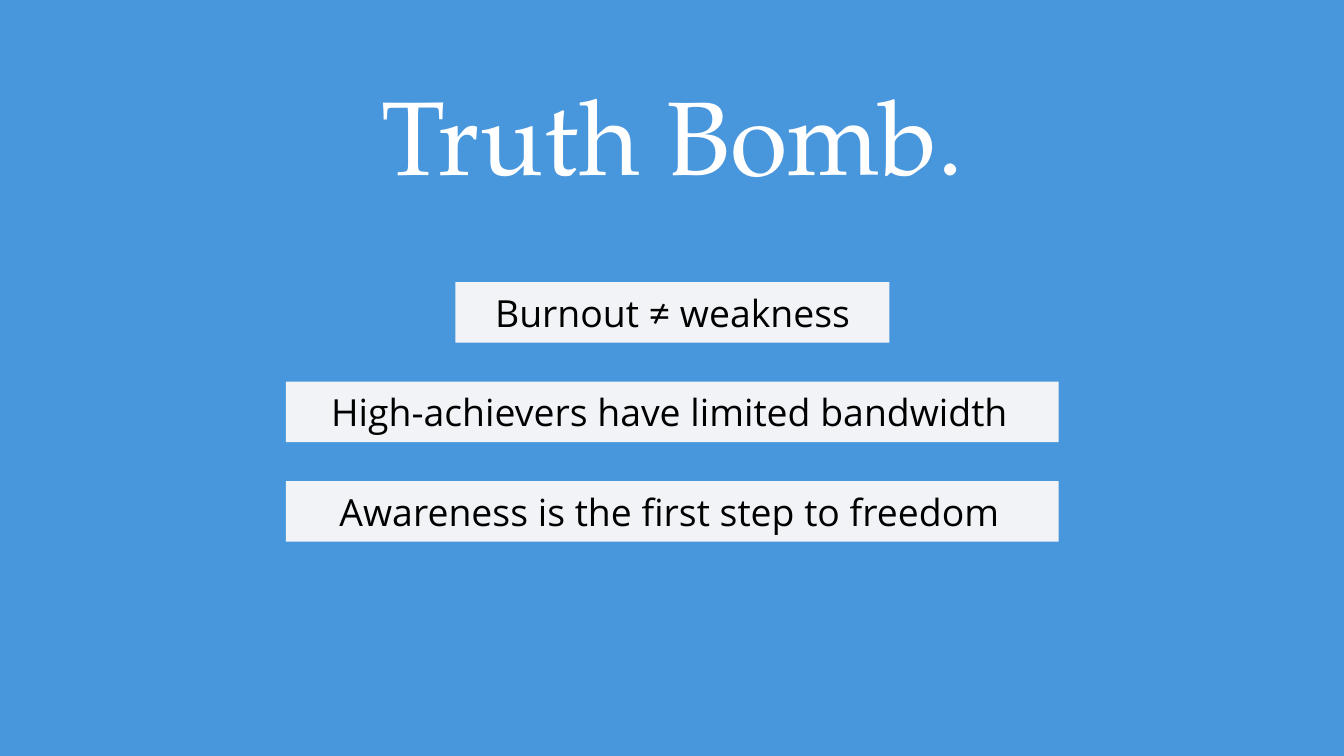
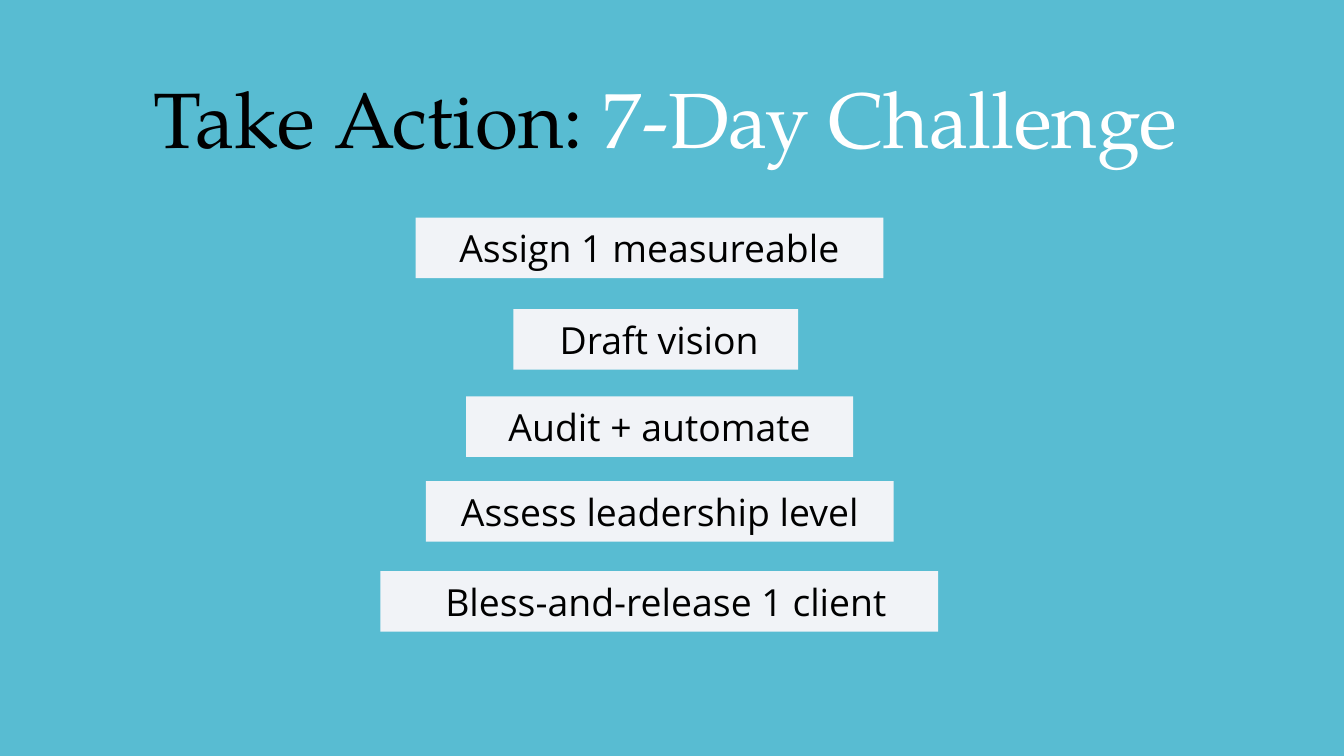
import pptx
import pptx.util
import pptx.dml.color
import pptx.enum.shapes
import pptx.enum.text

Pt = pptx.util.Pt
RGBColor = pptx.dml.color.RGBColor
ANCHOR = pptx.enum.text.MSO_ANCHOR

BLUE = RGBColor(0x48, 0x97, 0xDD)
TEAL = RGBColor(0x58, 0xBC, 0xD2)
PALE = RGBColor(0xF1, 0xF3, 0xF7)
BLACK = RGBColor(0, 0, 0)
WHITE = RGBColor(0xFF, 0xFF, 0xFF)


class Deck:
    """Hold the presentation style and the current slide."""

    title_font = "TeX Gyre Pagella"
    body_font = "Open Sans"
    body_size = 20
    inset = 7.2
    band_height = 32.4
    label_height = 22.4

    def __init__(self):
        self.prs = pptx.Presentation()
        self.prs.slide_width = Pt(720)
        self.prs.slide_height = Pt(405)
        self.s = None

    def slide(self, color):
        self.s = self.prs.slides.add_slide(self.prs.slide_layouts[6])
        self.rect(-2.9, 0, 725, 405, color)

    def rect(self, x, y, w, h, color):
        sp = self.s.shapes.add_shape(
            pptx.enum.shapes.MSO_SHAPE.RECTANGLE, Pt(x), Pt(y), Pt(w), Pt(h))
        sp.shadow.inherit = False
        sp.fill.solid()
        sp.fill.fore_color.rgb = color
        sp.line.fill.background()

    def text(self, x, y, w, h, runs, font, size, anchor):
        tf = self.s.shapes.add_textbox(Pt(x), Pt(y), Pt(w), Pt(h)).text_frame
        tf.word_wrap = True
        tf.vertical_anchor = anchor
        tf.margin_left = tf.margin_right = Pt(self.inset)
        tf.margin_top = tf.margin_bottom = Pt(self.inset)
        p = tf.paragraphs[0]
        p.alignment = pptx.enum.text.PP_ALIGN.CENTER
        p.font.name = font
        p.font.size = Pt(size)
        for words, color in runs:
            r = p.add_run()
            r.text = words
            r.font.color.rgb = color

    def title(self, x, y, w, size, runs):
        self.text(x, y, w, 70, runs, self.title_font, size, ANCHOR.TOP)

    def band(self, words, x, y, w, label_x=None, label_w=None):
        self.rect(x, y, w, self.band_height, PALE)
        label_y = y + (self.band_height - self.label_height) / 2
        self.text(x if label_x is None else label_x, label_y, label_w or w,
                  self.label_height, [(words, BLACK)],
                  self.body_font, self.body_size, ANCHOR.MIDDLE)


def main():
    deck = Deck()

    deck.slide(BLUE)
    deck.title(165, 31, 391, 56, [("Truth Bomb.", WHITE)])
    truths = [
        ("Burnout ≠ weakness", 244, 232.5, 247.7, 225.4),
        ("High-achievers have limited bandwidth", 153.2, 414, 153.2, 411),
        ("Awareness is the first step to freedom", 153.2, 414, 153.2, 411),
    ]
    for i, (words, x, w, label_x, label_w) in enumerate(truths):
        deck.band(words, x, 151.2 + i * 53.3, w, label_x, label_w)

    deck.slide(TEAL)
    deck.title(12.2, 30.2, 688.3, 42,
               [("Take Action:", BLACK), (" 7-Day Challenge", WHITE)])
    actions = [
        ("Assign 1 measureable", 222.6, 116.6, 250.6),
        ("Draft vision", 275, 165.6, 152.6, 270.7, 164.9),
        ("Audit + automate", 249.7, 212.4, 207.4),
        ("Assess leadership level", 228.2, 257.8, 250.6),
        ("Bless-and-release 1 client", 203.8, 306, 298.8, 218.9, 275.8),
    ]
    for action in actions:
        deck.band(*action)

    deck.prs.save("out.pptx")


if __name__ == "__main__":
    main()
